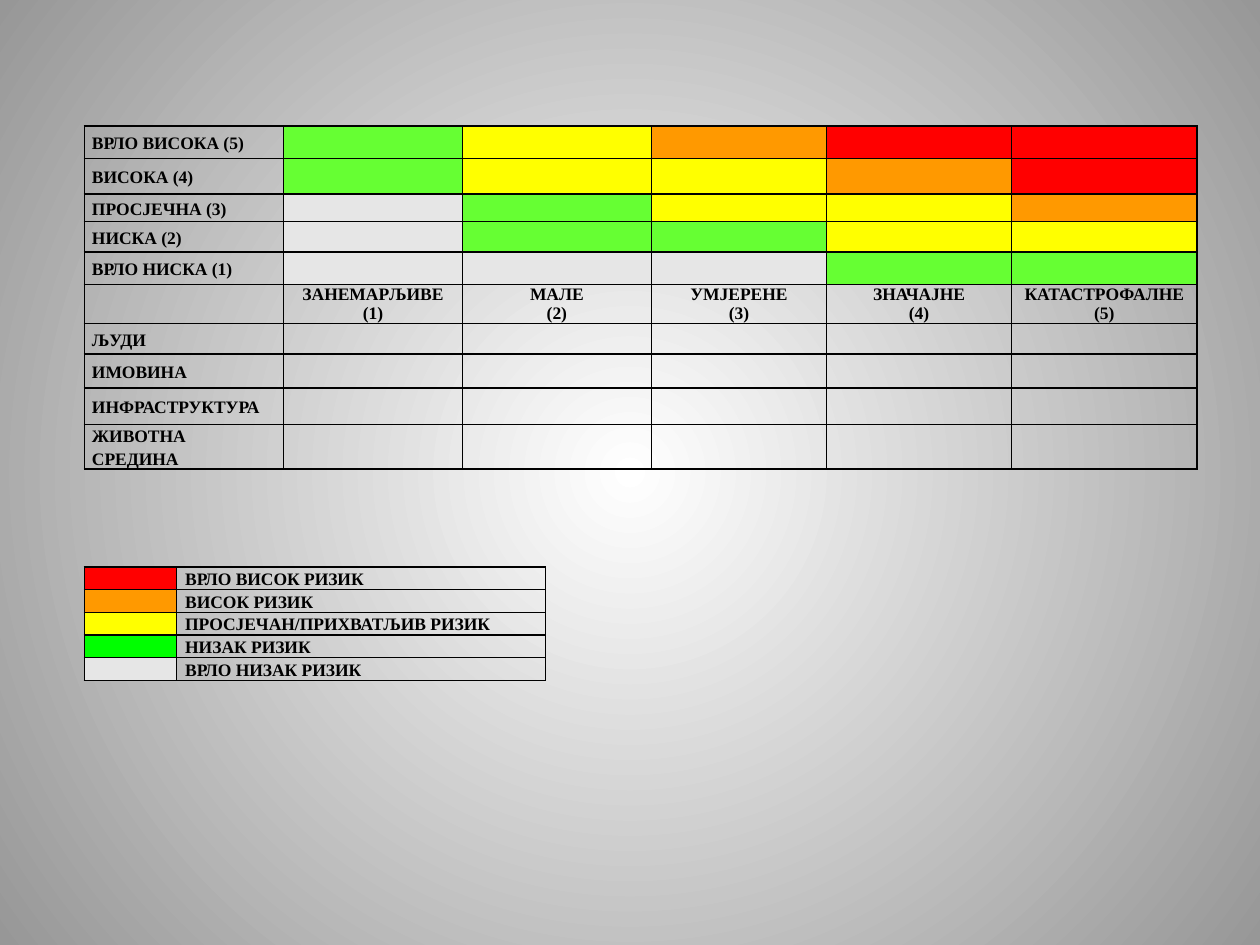
"""Build a risk matrix slide with its colour legend."""
from dataclasses import dataclass

import lxml.etree
import pptx
import pptx.dml.color
import pptx.enum.text
import pptx.oxml
import pptx.oxml.ns
import pptx.util

FONT = "Times New Roman"
FONT_SIZE = 10
BLACK = "000000"
SLIDE_WIDTH, SLIDE_HEIGHT = 10, 7.5
LEFT_SHARE = 0.067
RISK_COLOURS = {"R": "FF0000", "O": "FF9900", "Y": "FFFF00", "G": "66FF33", "W": "E6E6E6"}
LEVELS = [
    ("ВРЛО ВИСОКА (5)", "GYORR"),
    ("ВИСОКА (4)", "GYYOR"),
    ("ПРОСЈЕЧНА (3)", "WGYYO"),
    ("НИСКА (2)", "WGGYY"),
    ("ВРЛО НИСКА (1)", "WWWGG"),
]
CONSEQUENCES = ["ЗАНЕМАРЉИВЕ\n(1)", "МАЛЕ\n(2)", "УМЈЕРЕНЕ\n(3)", "ЗНАЧАЈНЕ\n(4)", "КАТАСТРОФАЛНЕ (5)"]
VALUES = ["ЉУДИ", "ИМОВИНА", "ИНФРАСТРУКТУРА", "ЖИВОТНА СРЕДИНА"]
LEGEND = [
    ("FF0000", "ВРЛО ВИСОК РИЗИК"),
    ("FF9900", "ВИСОК РИЗИК"),
    ("FFFF00", "ПРОСЈЕЧАН/ПРИХВАТЉИВ РИЗИК"),
    ("00FF00", "НИЗАК РИЗИК"),
    ("E6E6E6", "ВРЛО НИЗАК РИЗИК"),
]


@dataclass
class Entry:
    """Content and look of one table cell."""

    text: str = ""
    fill: str = ""
    centred: bool = False
    line_spacing: float = 1.15
    space: float = 0


@dataclass
class Grid:
    """A table with its place, column widths and row heights."""

    top_share: float
    columns: list[float]
    rows: list[float]
    inset: float
    entries: list[list[Entry]]


def colour(value: str) -> pptx.dml.color.RGBColor:
    """Turn a hex string into a colour."""
    return pptx.dml.color.RGBColor.from_string(value)


def paint_background(slide) -> None:
    """Fill the slide with a circular gradient from its centre."""
    fill = slide.background.fill
    fill.gradient()
    for stop, shade, position in zip(fill.gradient_stops, ("FFFFFF", "979797"), (0, 1)):
        stop.color.rgb = colour(shade)
        stop.position = position
    gradient = slide.element.find(".//" + pptx.oxml.ns.qn("a:gradFill"))
    gradient.remove(gradient.find(pptx.oxml.ns.qn("a:lin")))
    circle = lxml.etree.SubElement(gradient, pptx.oxml.ns.qn("a:path"), {"path": "circle"})
    sides = dict.fromkeys("ltrb", "50000")
    lxml.etree.SubElement(circle, pptx.oxml.ns.qn("a:fillToRect"), sides)


def outline(cell) -> None:
    """Draw a one-point black border on all sides of a cell."""
    properties = cell._tc.get_or_add_tcPr()
    for side in "LRTB":
        properties.append(pptx.oxml.parse_xml(
            f'<a:ln{side} {pptx.oxml.ns.nsdecls("a")} w="12700"><a:solidFill>'
            f'<a:srgbClr val="{BLACK}"/></a:solidFill></a:ln{side}>'
        ))


def write_cell(cell, entry: Entry, inset: float) -> None:
    """Apply borders, fill and formatted text to a cell."""
    outline(cell)
    if entry.fill:
        cell.fill.solid()
        cell.fill.fore_color.rgb = colour(entry.fill)
    else:
        cell.fill.background()
    cell.margin_left = cell.margin_right = pptx.util.Inches(inset)
    cell.margin_top = cell.margin_bottom = 0
    cell.vertical_anchor = pptx.enum.text.MSO_ANCHOR.MIDDLE
    cell.text_frame.text = entry.text
    for paragraph in cell.text_frame.paragraphs:
        if entry.centred:
            paragraph.alignment = pptx.enum.text.PP_ALIGN.CENTER
        paragraph.line_spacing = entry.line_spacing
        paragraph.space_before = paragraph.space_after = pptx.util.Pt(entry.space)
        for run in paragraph.runs:
            run.font.name = FONT
            run.font.size = pptx.util.Pt(FONT_SIZE)
            run.font.bold = True
            run.font.color.rgb = colour(BLACK)
        if not entry.text:
            lxml.etree.SubElement(
                paragraph._p, pptx.oxml.ns.qn("a:endParaRPr"), {"sz": str(FONT_SIZE * 100)}
            )


def draw_grid(slide, grid: Grid) -> None:
    """Add a table and write all its cells."""
    table = slide.shapes.add_table(
        len(grid.rows), len(grid.columns),
        pptx.util.Inches(LEFT_SHARE * SLIDE_WIDTH),
        pptx.util.Inches(grid.top_share * SLIDE_HEIGHT),
        pptx.util.Inches(sum(grid.columns)), pptx.util.Inches(sum(grid.rows)),
    ).table
    table.first_row = table.horz_banding = False
    for column, width in zip(table.columns, grid.columns):
        column.width = pptx.util.Inches(width)
    for row, height, entries in zip(table.rows, grid.rows, grid.entries):
        row.height = pptx.util.Inches(height)
        for cell, entry in zip(row.cells, entries):
            write_cell(cell, entry, grid.inset)


def risk_matrix() -> Grid:
    """Describe the likelihood and consequence matrix."""
    levels = [
        [Entry(label, space=6)] + [Entry(fill=RISK_COLOURS[code]) for code in codes]
        for label, codes in LEVELS
    ]
    header = [Entry()] + [Entry(text, centred=True, line_spacing=1) for text in CONSEQUENCES]
    values = [[Entry(label, space=6)] + [Entry() for _ in CONSEQUENCES] for label in VALUES]
    return Grid(
        top_share=2 / 15,
        columns=[1.58, 1.42, 1.5, 1.39, 1.47, 1.47],
        rows=[0.26, 0.28, 0.22, 0.24, 0.26, 0.31, 0.24, 0.27, 0.29, 0.35],
        inset=0.06,
        entries=levels + [header] + values,
    )


def risk_legend() -> Grid:
    """Describe the legend of risk colours."""
    return Grid(
        top_share=0.6,
        columns=[0.73, 2.93],
        rows=[0.18] * len(LEGEND),
        inset=0.07,
        entries=[[Entry(fill=shade), Entry(label)] for shade, label in LEGEND],
    )


def main() -> None:
    """Build and save the presentation."""
    presentation = pptx.Presentation()
    presentation.slide_width = pptx.util.Inches(SLIDE_WIDTH)
    presentation.slide_height = pptx.util.Inches(SLIDE_HEIGHT)
    slide = presentation.slides.add_slide(presentation.slide_layouts[6])
    paint_background(slide)
    for grid in (risk_matrix(), risk_legend()):
        draw_grid(slide, grid)
    presentation.save("out.pptx")


if __name__ == "__main__":
    main()
